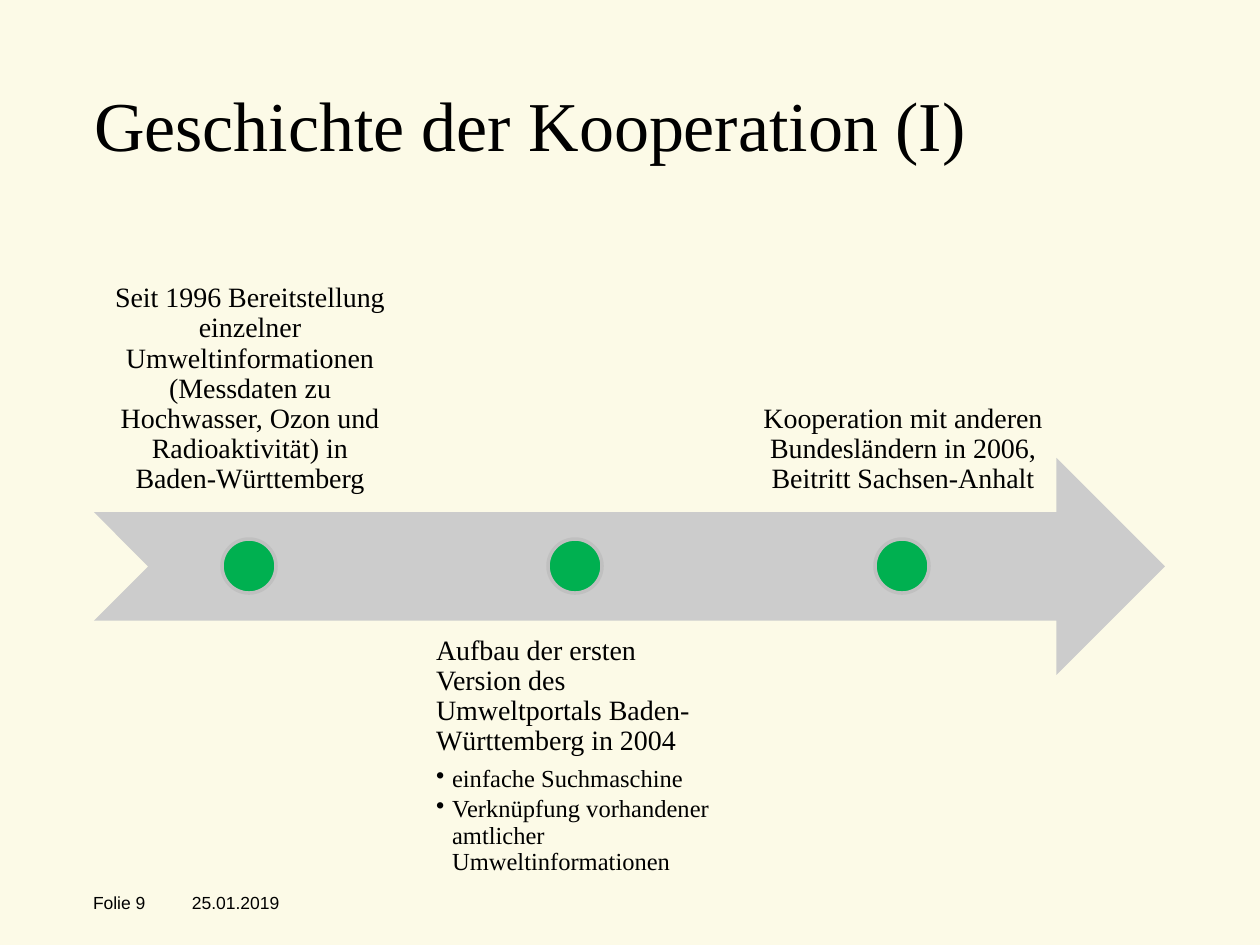
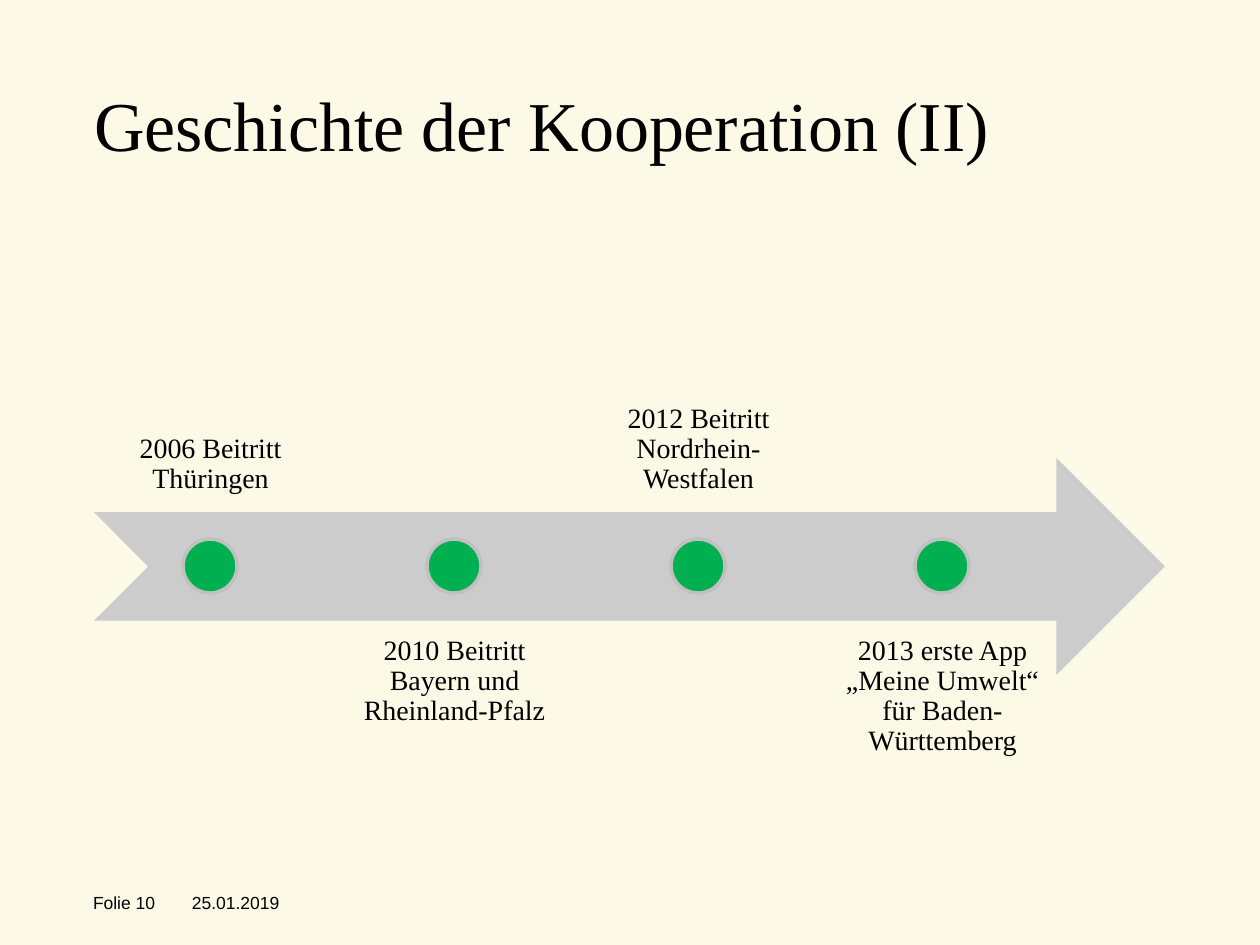
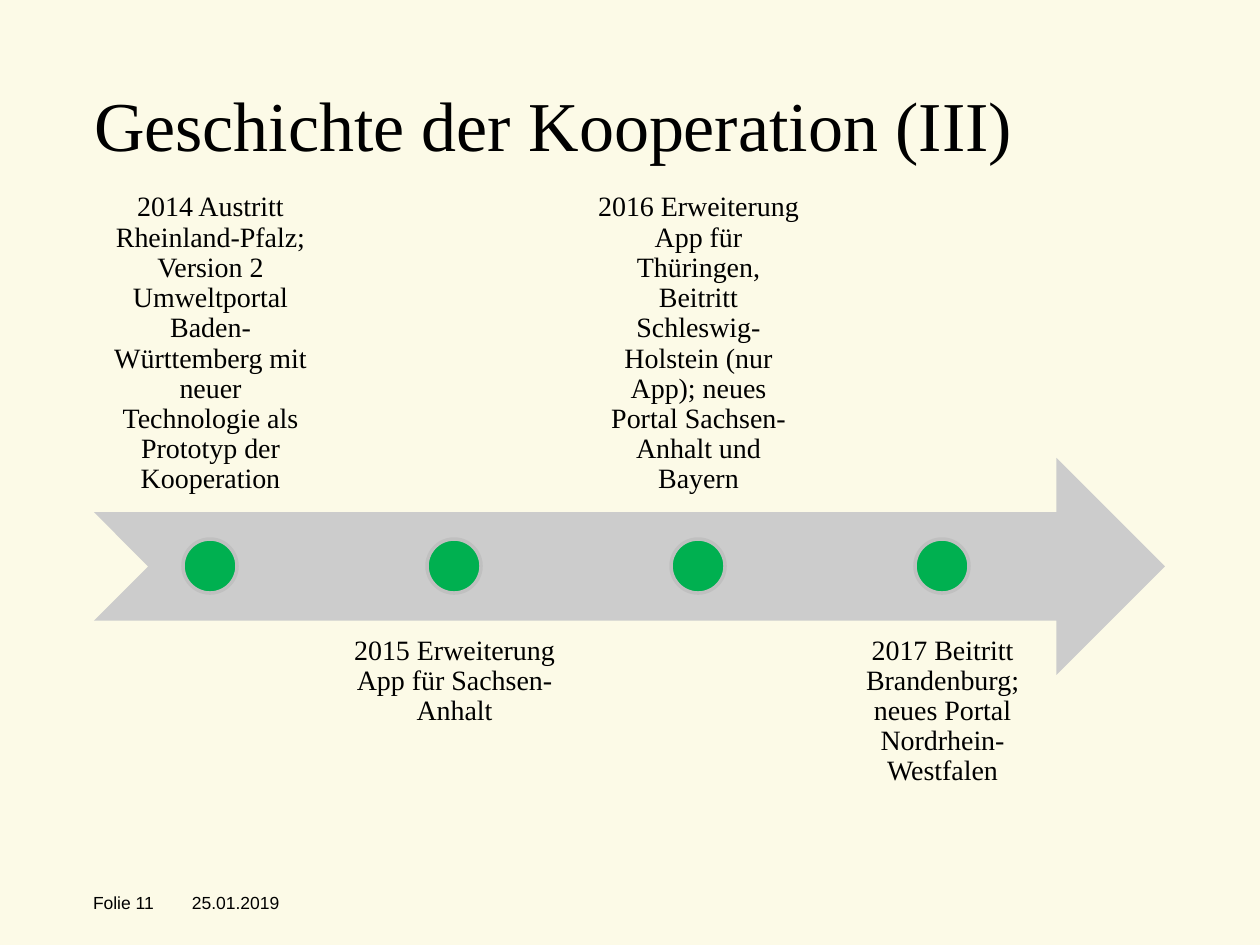
from lxml import etree
from pptx import Presentation
from pptx import util as u
from pptx.dml import color
from pptx.enum import shapes, text
from pptx.oxml import ns

COLORS = {"background": "FCFAE7", "text": "000000", "arrow": "CCCCCC",
          "dot": "00B050", "dot_line": "C0C0C0"}
SERIF, SANS = "Times New Roman", "Arial"
DATE = "25.01.2019"
FIRST_NUMBER = 9

ARROW = (94, 458, 1071, 217)
DOT_SIZE = 54
ABOVE_TOP, BELOW_TOP = 294, 620
USABLE_SHARE, GAP_SHARE = 0.9, 0.05
BULLET_INDENT = 16
EVENT_INSETS = (16, 16, 15, 16)

TITLE_FORMAT = {"size": u.Pt(40), "name": SERIF}
EVENT_FORMAT = {"size": u.Pt(16), "name": SERIF}
DETAIL_FORMAT = {"size": u.Pt(14), "name": SERIF}
FOOTER_FORMAT = {"size": u.Pt(10), "name": SANS}

TIMELINES = [
    ("Geschichte der Kooperation (I)", [
        ["Seit 1996 Bereitstellung einzelner Umweltinformationen (Messdaten zu "
         "Hochwasser, Ozon und Radioaktivität) in Baden-Württemberg"],
        ["Aufbau der ersten Version des Umweltportals Baden-Württemberg in 2004",
         "einfache Suchmaschine",
         "Verknüpfung vorhandener amtlicher Umweltinformationen"],
        ["Kooperation mit anderen Bundesländern in 2006, Beitritt Sachsen-Anhalt"],
    ]),
    ("Geschichte der Kooperation (II)", [
        ["2006 Beitritt Thüringen"],
        ["2010 Beitritt Bayern und Rheinland-Pfalz"],
        ["2012 Beitritt Nordrhein-Westfalen"],
        ["2013 erste App „Meine Umwelt“ für Baden-Württemberg"],
    ]),
    ("Geschichte der Kooperation (III)", [
        ["2014 Austritt Rheinland-Pfalz; Version 2 Umweltportal Baden-Württemberg "
         "mit neuer Technologie als Prototyp der Kooperation"],
        ["2015 Erweiterung App für Sachsen-Anhalt"],
        ["2016 Erweiterung App für Thüringen, Beitritt Schleswig-Holstein (nur App); "
         "neues Portal Sachsen-Anhalt und Bayern"],
        ["2017 Beitritt Brandenburg; neues Portal Nordrhein-Westfalen"],
    ]),
]


def px(length):
    return u.Emu(round(length * 914400 / 126))


def rgb(name):
    return color.RGBColor.from_string(COLORS[name])


def set_attributes(target, values):
    for name, value in values.items():
        setattr(target, name, value)


def place(shape, box):
    set_attributes(shape, dict(zip(("left", "top", "width", "height"), map(px, box))))


def format_frame(frame, insets, anchor):
    sides = ("margin_left", "margin_top", "margin_right", "margin_bottom")
    set_attributes(frame, dict(zip(sides, map(px, insets))))
    set_attributes(frame, {"word_wrap": True, "vertical_anchor": anchor,
                           "auto_size": text.MSO_AUTO_SIZE.NONE})


def write(paragraph, words, font_format, alignment=text.PP_ALIGN.LEFT):
    paragraph.text = words
    paragraph.alignment = alignment
    set_attributes(paragraph.font, font_format)
    paragraph.font.color.rgb = rgb("text")


def add_text_box(slide, box, insets, anchor):
    shape = slide.shapes.add_textbox(*map(px, box))
    format_frame(shape.text_frame, insets, anchor)
    return shape.text_frame


def add_filled_shape(slide, kind, box, fill, line=None):
    shape = slide.shapes.add_shape(kind, *map(px, box))
    shape.shadow.inherit = False
    shape.fill.solid()
    shape.fill.fore_color.rgb = rgb(fill)
    if line:
        shape.line.color.rgb = rgb(line)
        shape.line.width = u.Pt(2)
    else:
        shape.line.fill.background()


def add_bullet(paragraph):
    properties = paragraph._p.get_or_add_pPr()
    properties.set("marL", str(px(BULLET_INDENT)))
    properties.set("indent", str(-px(BULLET_INDENT)))
    etree.SubElement(properties, ns.qn("a:buChar")).set("char", "•")


def add_event(slide, box, words, anchor):
    frame = add_text_box(slide, box, EVENT_INSETS, anchor)
    heading, *details = words
    alignment = text.PP_ALIGN.LEFT if details else text.PP_ALIGN.CENTER
    write(frame.paragraphs[0], heading, EVENT_FORMAT, alignment)
    for detail in details:
        paragraph = frame.add_paragraph()
        paragraph.level = 1
        add_bullet(paragraph)
        write(paragraph, detail, DETAIL_FORMAT)
    for paragraph in frame.paragraphs:
        paragraph.line_spacing = 0.9
    for paragraph in frame.paragraphs[:-1]:
        paragraph.space_after = u.Pt(2.1 if paragraph.level else 5.6)


def add_timeline(slide, events):
    left, top, width, height = ARROW
    add_filled_shape(slide, shapes.MSO_SHAPE.NOTCHED_RIGHT_ARROW, ARROW, "arrow")
    count = len(events)
    column = width * USABLE_SHARE / (count + GAP_SHARE * (count - 1))
    for index, words in enumerate(events):
        event_left = left + round(index * column * (1 + GAP_SHARE))
        below = index % 2
        anchor = text.MSO_ANCHOR.TOP if below else text.MSO_ANCHOR.BOTTOM
        event_top = BELOW_TOP if below else ABOVE_TOP
        add_event(slide, (event_left, event_top, round(column), height), words, anchor)
        dot_left = event_left + round((column - DOT_SIZE) / 2)
        dot_top = top + (height - DOT_SIZE) // 2
        add_filled_shape(slide, shapes.MSO_SHAPE.OVAL,
                         (dot_left, dot_top, DOT_SIZE, DOT_SIZE), "dot", "dot_line")


def format_title(slide, words):
    title = slide.shapes.title
    place(title, (94, 73, 1071, 168))
    format_frame(title.text_frame, (0, 8, 0, 0), text.MSO_ANCHOR.TOP)
    write(title.text_frame.paragraphs[0], words, TITLE_FORMAT)


def add_footer(slide, number):
    date = add_text_box(slide, (192, 892, 102, 21), (0, 0, 0, 0), text.MSO_ANCHOR.TOP)
    write(date.paragraphs[0], DATE, FOOTER_FORMAT)
    folio = add_text_box(slide, (81, 886, 108, 33), (12, 6, 12, 6), text.MSO_ANCHOR.MIDDLE)
    write(folio.paragraphs[0], f"Folie {number}", FOOTER_FORMAT)


def main():
    presentation = Presentation()
    presentation.slide_width, presentation.slide_height = px(1260), px(945)
    background = presentation.slide_master.background.fill
    background.solid()
    background.fore_color.rgb = rgb("background")
    for number, (title, events) in enumerate(TIMELINES, FIRST_NUMBER):
        slide = presentation.slides.add_slide(presentation.slide_layouts[5])
        format_title(slide, title)
        add_timeline(slide, events)
        add_footer(slide, number)
    presentation.save("out.pptx")


if __name__ == "__main__":
    main()
